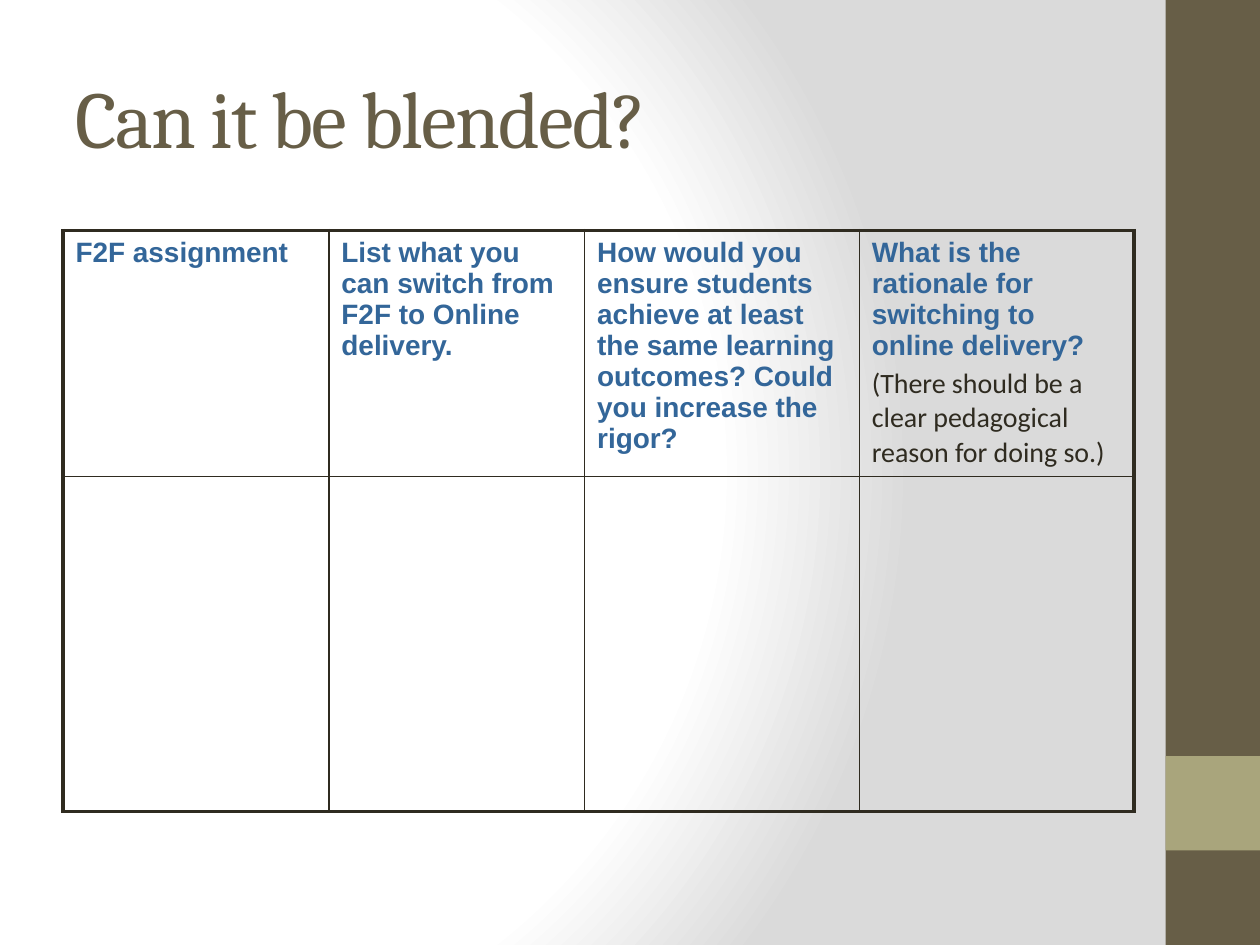
from dataclasses import dataclass

from lxml.etree import SubElement
from pptx import Presentation
from pptx.dml.color import RGBColor as Rgb
from pptx.enum.shapes import MSO_SHAPE as Shape
from pptx.enum.text import MSO_ANCHOR as Anchor, MSO_AUTO_SIZE as AutoSize, PP_ALIGN as Align
from pptx.oxml import parse_xml
from pptx.oxml.ns import nsdecls, qn
from pptx.util import Inches, Pt


@dataclass(frozen=True)
class Theme:
    brown: str = "675E47"
    olive: str = "A9A57C"
    ink: str = "2F2B20"
    blue: str = "336699"
    white: str = "FFFFFF"
    grey: str = "DADADA"
    title_font: str = "Cambria"
    heading_font: str = "Arial"
    body_font: str = "Calibri"
    title_size: int = 46
    table_size: int = 16
    outer_line: float = 2.25
    inner_line: float = 1


THEME = Theme()
COLUMN_WIDTHS = [2.11, 2.03, 2.18, 2.18]
ROW_HEIGHTS = [1.95, 2.66]
HEADINGS = [
    "F2F assignment",
    "List what you can switch from F2F to Online delivery.",
    "How would you ensure students achieve at least the same learning outcomes? "
    "Could you increase the rigor?",
    "What is the rationale for switching to online delivery?",
]
RATIONALE_NOTE = "(There should be a clear pedagogical reason for doing so.)"


def set_background(slide):
    """Fill the background with a radial gradient, white at its focus."""
    stops = "".join(
        f'<a:gs pos="{percent * 1000}"><a:srgbClr val="{color}"/></a:gs>'
        for percent, color in [(0, THEME.white), (75, THEME.white), (100, THEME.grey)]
    )
    background = parse_xml(
        f'<p:bg {nsdecls("p", "a")}><p:bgPr><a:gradFill rotWithShape="1">'
        f'<a:gsLst>{stops}</a:gsLst><a:path path="circle">'
        '<a:fillToRect l="20000" t="50000" r="100000" b="50000"/></a:path>'
        "</a:gradFill><a:effectLst/></p:bgPr></p:bg>"
    )
    slide.element.cSld.insert(0, background)


def add_block(slide, top, height, color):
    """Add a plain rectangle in the strip along the right edge."""
    block = slide.shapes.add_shape(
        Shape.RECTANGLE, Inches(9.25), Inches(top), Inches(0.75), Inches(height)
    )
    block.shadow.inherit = False
    block.fill.solid()
    block.fill.fore_color.rgb = Rgb.from_string(color)
    block.line.fill.background()


def style_font(font, name, size, color, bold=False):
    font.name = name
    font.size = Pt(size)
    font.color.rgb = Rgb.from_string(color)
    font.bold = bold


def set_title(slide, text):
    title = slide.shapes.title
    title.left, title.top = Inches(0.5), Inches(0.3)
    title.width, title.height = Inches(8.33), Inches(1.25)
    frame = title.text_frame
    frame.text = text
    frame.auto_size = AutoSize.NONE
    frame.vertical_anchor = Anchor.MIDDLE
    paragraph = frame.paragraphs[0]
    paragraph.alignment = Align.LEFT
    font = paragraph.runs[0].font
    style_font(font, THEME.title_font, THEME.title_size, THEME.brown)
    paragraph.runs[0]._r.get_or_add_rPr().set("spc", "-100")


def set_borders(cell, outer_sides):
    """Draw all four cell borders, heavier on the outer sides."""
    properties = cell._tc.get_or_add_tcPr()
    for side in "LRTB":
        width = THEME.outer_line if side in outer_sides else THEME.inner_line
        line = SubElement(properties, qn(f"a:ln{side}"), w=str(Pt(width)))
        fill = SubElement(line, qn("a:solidFill"))
        SubElement(fill, qn("a:srgbClr"), val=THEME.ink)


def style_cell_paragraph(paragraph, font_name, color, bold):
    paragraph.space_before = Pt(0.2 * THEME.table_size)
    style_font(paragraph.font, font_name, THEME.table_size, color, bold)


def add_planning_table(slide):
    table = slide.shapes.add_table(
        len(ROW_HEIGHTS), len(COLUMN_WIDTHS), Inches(0.5), Inches(1.83),
        Inches(sum(COLUMN_WIDTHS)), Inches(sum(ROW_HEIGHTS)),
    ).table
    table.first_row = table.horz_banding = False
    for column, width in zip(table.columns, COLUMN_WIDTHS):
        column.width = Inches(width)
    last_row, last_column = len(ROW_HEIGHTS) - 1, len(COLUMN_WIDTHS) - 1
    for i, row in enumerate(table.rows):
        row.height = Inches(ROW_HEIGHTS[i])
        for j, cell in enumerate(row.cells):
            edges = {"T": i == 0, "B": i == last_row, "L": j == 0, "R": j == last_column}
            set_borders(cell, [side for side, is_outer in edges.items() if is_outer])
            cell.fill.background()

    for cell, heading in zip(table.rows[0].cells, HEADINGS):
        cell.text = heading
        style_cell_paragraph(
            cell.text_frame.paragraphs[0], THEME.heading_font, THEME.blue, bold=True
        )
    note = table.cell(0, last_column).text_frame.add_paragraph()
    note.text = RATIONALE_NOTE
    style_cell_paragraph(note, THEME.body_font, THEME.ink, bold=False)


def main():
    presentation = Presentation()
    presentation.slide_width, presentation.slide_height = Inches(10), Inches(7.5)
    slide = presentation.slides.add_slide(presentation.slide_layouts[5])
    set_background(slide)
    add_block(slide, 0, 7.5, THEME.brown)
    add_block(slide, 6, 0.75, THEME.olive)
    set_title(slide, "Can it be blended?")
    add_planning_table(slide)
    presentation.save("out.pptx")


if __name__ == "__main__":
    main()
